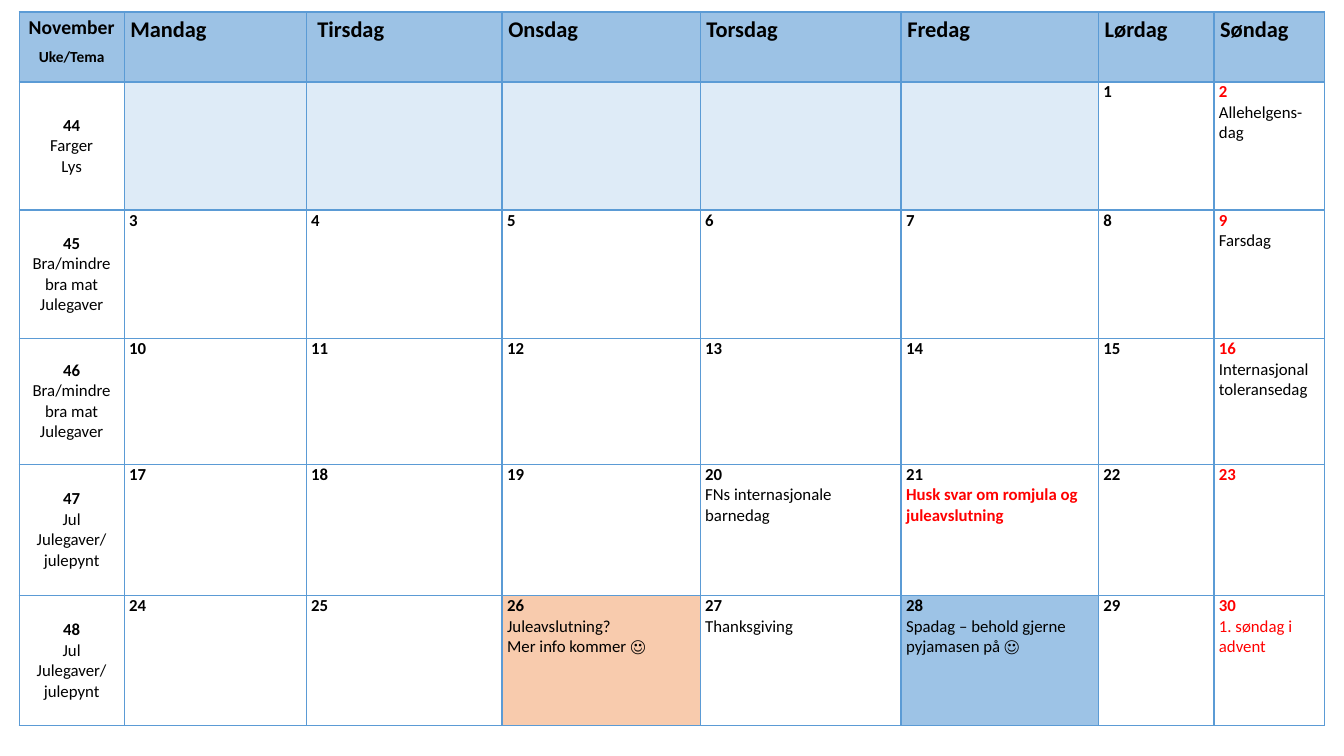
from lxml import etree
from pptx import Presentation
from pptx.dml.color import RGBColor
from pptx.enum import text as t
from pptx.oxml import ns
from pptx.util import Pt

BLACK = RGBColor(0, 0, 0)
RED = RGBColor(0xFF, 0, 0)
WHITE = RGBColor(0xFF, 0xFF, 0xFF)
HEAD = RGBColor(0x9C, 0xC2, 0xE5)
PALE = RGBColor(0xDE, 0xEB, 0xF7)
PEACH = RGBColor(0xF8, 0xCB, 0xAD)
BLUE = RGBColor(0x9D, 0xC3, 0xE6)
EDGE = RGBColor(0x5B, 0x9B, 0xD5)

COLS = [75, 130, 140, 141.5, 143.5, 141, 82.5, 79]
ROWS = [50, 91.5, 92, 89.5, 94, 93]
DAYS = ["Mandag", " Tirsdag", "Onsdag", "Torsdag", "Fredag", "Lørdag", "Søndag"]
FOOD = ["Bra/mindre bra mat", "Julegaver"]
YULE = ["Jul", "Julegaver/", "julepynt"]
WEEKS = {44: ["Farger", "Lys"], 45: FOOD, 46: FOOD, 47: YULE, 48: YULE}
SUNDAY = 7  # column of the red dates

# Date: lines, then format of those lines
NOTES = {
    2: (["Allehelgens-dag"], {}),
    9: (["Farsdag"], {}),
    16: (["Internasjonal toleransedag"], {}),
    20: (["FNs internasjonale barnedag"], {}),
    21: (["Husk svar om romjula og juleavslutning"], {"color": RED, "bold": True}),
    26: (["Juleavslutning?", "Mer info kommer ☺"], {}),
    27: (["Thanksgiving"], {}),
    28: (["Spadag – behold gjerne pyjamasen på ☺"], {}),
    30: (["1. søndag i advent"], {"color": RED}),
}
FILLS = {26: PEACH, 28: BLUE}


def write(cell, line, size=12, bold=False, color=BLACK, mid=False,
          gap=None, before=0, after=0):
    """Add one paragraph to a cell."""
    frame = cell.text_frame
    para = frame.add_paragraph() if frame.text else frame.paragraphs[0]
    para.alignment = t.PP_ALIGN.CENTER if mid else t.PP_ALIGN.LEFT
    para.space_before, para.space_after = Pt(before), Pt(after)
    if gap:
        para.line_spacing = gap
    run = para.add_run()
    run.text = line
    font = run.font
    font.name, font.size, font.bold = "Calibri", Pt(size), bold
    font.color.rgb = color


def style(cell, fill, side=3.6):
    """Set the fill, margins and border of a cell."""
    cell.margin_left = cell.margin_right = Pt(side)
    cell.margin_top = cell.margin_bottom = 0
    cell.fill.solid()
    cell.fill.fore_color.rgb = fill
    props = cell._tc.get_or_add_tcPr()
    for spot, name in enumerate(("lnL", "lnR", "lnT", "lnB")):
        line = etree.Element(ns.qn("a:" + name), w=str(Pt(1)))
        paint = etree.SubElement(line, ns.qn("a:solidFill"))
        etree.SubElement(paint, ns.qn("a:srgbClr"), val=str(EDGE))
        props.insert(spot, line)


def header(grid):
    """Month corner and weekday names."""
    month = grid.cell(0, 0)
    style(month, HEAD, side=5)
    for line, size in (("November", 14), ("Uke/Tema", 11)):
        write(month, line, size=size, bold=True, mid=True,
              gap=1.15, before=2, after=2)
    for col, day in enumerate(DAYS, 1):
        cell = grid.cell(0, col)
        style(cell, HEAD, side=4.5)
        write(cell, day, size=16, bold=True, gap=1.15, before=2)


def week(grid, row, number, themes):
    """One week: its themes, then seven days."""
    lead = grid.cell(row, 0)
    style(lead, WHITE)
    lead.vertical_anchor = t.MSO_ANCHOR.MIDDLE
    write(lead, str(number), bold=True, mid=True)
    for theme in themes:
        write(lead, theme, mid=True)
    for col in range(1, 8):
        cell = grid.cell(row, col)
        date = 7 * (row - 1) + col - 5  # the 1st is a Saturday
        if date < 1:
            style(cell, PALE)
            continue
        style(cell, FILLS.get(date, WHITE))
        write(cell, str(date), bold=True, color=RED if col == SUNDAY else BLACK)
        lines, look = NOTES.get(date, ([], {}))
        for line in lines:
            write(cell, line, **look)


def calendar(slide, left, top):
    """The whole month as a table."""
    frame = slide.shapes.add_table(len(ROWS), len(COLS), Pt(left), Pt(top),
                                   Pt(sum(COLS)), Pt(sum(ROWS)))
    grid = frame.table
    grid.first_row = grid.horz_banding = False
    for col, width in zip(grid.columns, COLS):
        col.width = Pt(width)
    for row, height in zip(grid.rows, ROWS):
        row.height = Pt(height)
    header(grid)
    for row, (number, themes) in enumerate(WEEKS.items(), 1):
        week(grid, row, number, themes)


def main():
    deck = Presentation()
    deck.slide_width, deck.slide_height = Pt(960), Pt(540)
    slide = deck.slides.add_slide(deck.slide_layouts[6])
    calendar(slide, 13.7, 8.6)
    deck.save("out.pptx")


if __name__ == "__main__":
    main()
